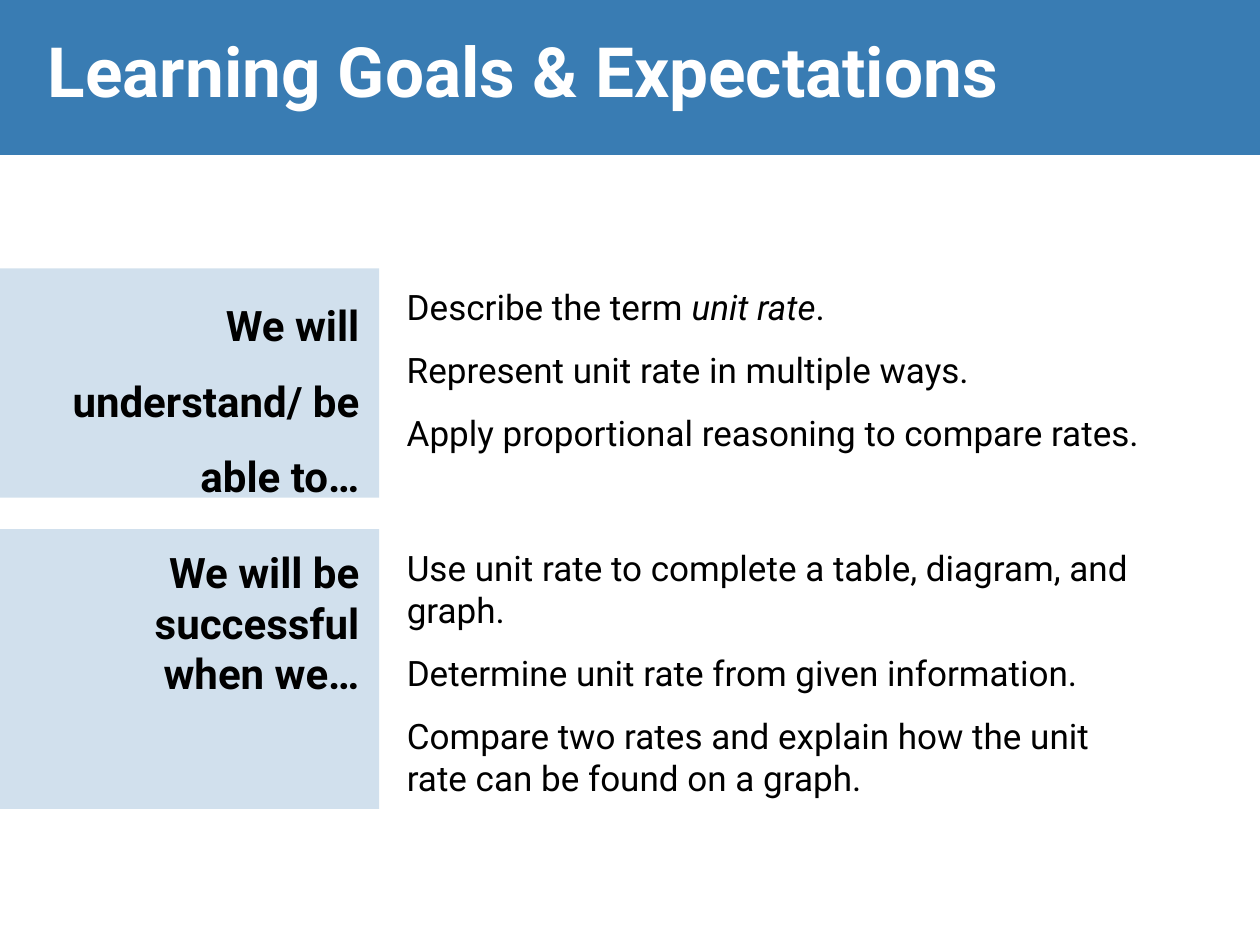
from dataclasses import dataclass

from lxml.etree import SubElement
from pptx import Presentation
from pptx.dml.color import RGBColor
from pptx.enum.shapes import MSO_SHAPE as Shape
from pptx.enum.text import MSO_ANCHOR as Anchor, MSO_AUTO_SIZE as AutoSize, PP_ALIGN as Align
from pptx.oxml.ns import qn
from pptx.util import Inches, Pt


@dataclass(frozen=True)
class Theme:
    font: str = "Roboto"
    blue: RGBColor = RGBColor(0x39, 0x7C, 0xB3)
    white: RGBColor = RGBColor(0xFF, 0xFF, 0xFF)
    black: RGBColor = RGBColor(0, 0, 0)
    title_size: float = 39.6
    label_size: int = 24
    goal_size: int = 20
    panel_opacity: int = 23


THEME = Theme()


def style_runs(paragraph, size, color, bold=False):
    for run in paragraph.runs:
        run.font.name = THEME.font
        run.font.size = Pt(size)
        run.font.color.rgb = color
        run.font.bold = bold


def add_panel(slide, left, top, width, height, opacity=100):
    panel = slide.shapes.add_shape(
        Shape.RECTANGLE, Inches(left), Inches(top), Inches(width), Inches(height))
    panel.shadow.inherit = False
    panel.fill.solid()
    panel.fill.fore_color.rgb = THEME.blue
    panel.line.fill.background()
    if opacity < 100:
        color = panel.fill._xPr.find(qn("a:solidFill"))[0]
        SubElement(color, qn("a:alpha")).set("val", str(opacity * 1000))


def add_text_frame(slide, left, top, width, height):
    box = slide.shapes.add_textbox(
        Inches(left), Inches(top), Inches(width), Inches(height))
    box.text_frame.word_wrap = True
    return box.text_frame


def set_space_before_percent(paragraph, percent):
    paragraph.space_before = Pt(0)
    spacing = paragraph._p.pPr.find(qn("a:spcBef"))
    spacing.clear()
    SubElement(spacing, qn("a:spcPct")).set("val", str(percent * 1000))


def add_header(slide, left, top, width, height):
    add_panel(slide, left, top, width, height)
    title = slide.shapes.title
    title.left, title.top = Inches(left + 0.28), Inches(top)
    title.width, title.height = Inches(width - 1), Inches(height - 0.13)
    # Bring the title in front of its band
    title._element.getparent().append(title._element)
    frame = title.text_frame
    frame.text = "Learning Goals & Expectations"
    frame.auto_size = AutoSize.NONE
    frame.vertical_anchor = Anchor.MIDDLE
    heading = frame.paragraphs[0]
    heading.alignment = Align.LEFT
    style_runs(heading, THEME.title_size, THEME.white, bold=True)


def add_goal_row(slide, left, top, width, height, label, goals,
                 label_left, label_drop, line_spacing, goals_width):
    """Tinted label panel on the left, list of goals on the right."""
    add_panel(slide, left, top, width, height, THEME.panel_opacity)

    # Label
    label_frame = add_text_frame(
        slide, label_left, top + label_drop, left + width - 0.06 - label_left, 1.01)
    label_frame.text = label
    prompt = label_frame.paragraphs[0]
    prompt.alignment = Align.RIGHT
    prompt.line_spacing = line_spacing
    set_space_before_percent(prompt, 20)
    style_runs(prompt, THEME.label_size, THEME.black, bold=True)

    # Goals: each is a list of text parts, every second part in italics
    goals_frame = add_text_frame(
        slide, left + width + 0.12, top + 0.09, goals_width, 1.98)
    for index, parts in enumerate(goals):
        goal = goals_frame.add_paragraph() if index else goals_frame.paragraphs[0]
        goal.space_after = Pt(12)
        for part_index, part in enumerate(parts):
            run = goal.add_run()
            run.text = part
            run.font.italic = part_index % 2 == 1
        style_runs(goal, THEME.goal_size, THEME.black)


def main():
    deck = Presentation()
    deck.slide_width, deck.slide_height = Inches(10), Inches(7.5)
    slide = deck.slides.add_slide(deck.slide_layouts[5])

    add_header(slide, 0, 0, 10, 1.23)
    add_goal_row(
        slide, 0, 2.13, 3.01, 1.82,
        "We will understand/ be able to…",
        [["Describe the term ", "unit rate", "."],
         ["Represent unit rate in multiple ways."],
         ["Apply proportional reasoning to compare rates."]],
        label_left=0.42, label_drop=0, line_spacing=1.5, goals_width=6.3)
    add_goal_row(
        slide, 0, 4.2, 3.01, 2.22,
        "We will be successful when we…",
        [["Use unit rate to complete a table, diagram, and graph."],
         ["Determine unit rate from given information."],
         ["Compare two rates and explain how the unit rate can be found on a graph."]],
        label_left=0.8, label_drop=0.09, line_spacing=1.0, goals_width=5.95)

    deck.save("out.pptx")


if __name__ == "__main__":
    main()
